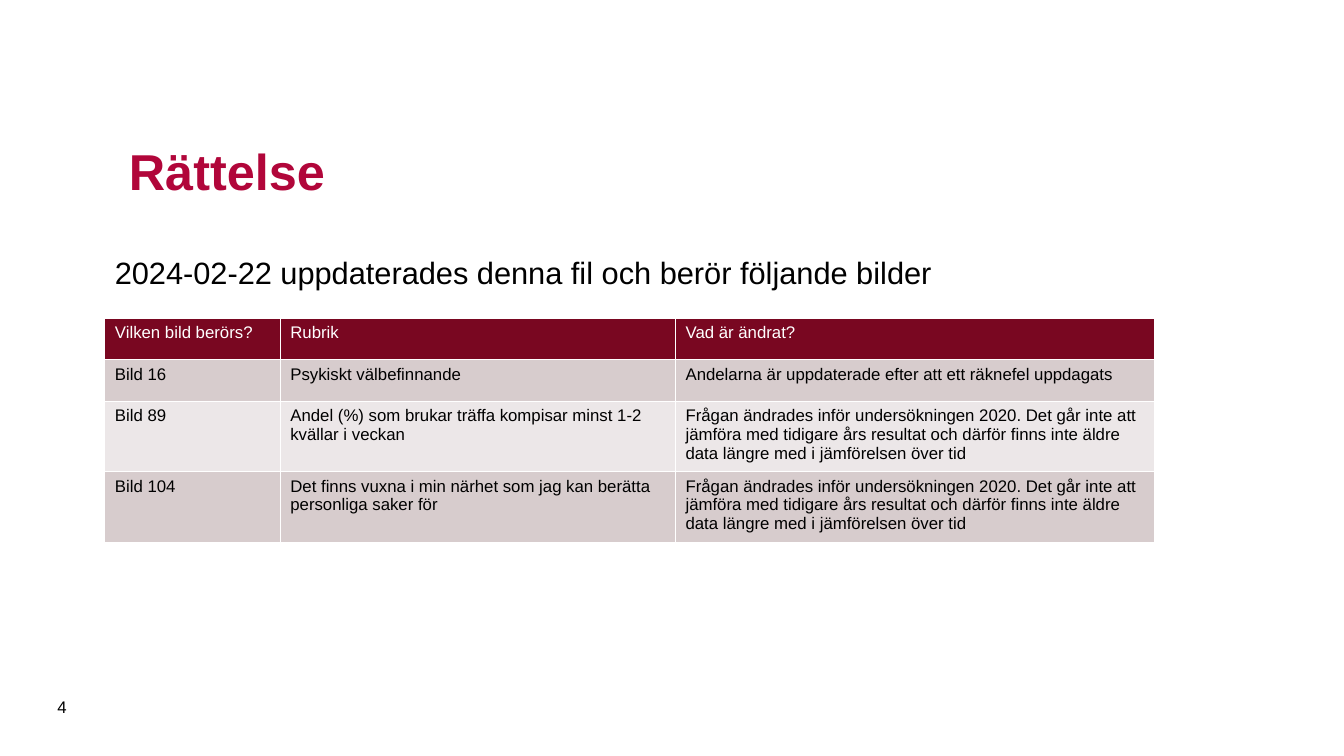
from pptx import Presentation
from pptx.dml.color import RGBColor
from pptx.enum import text
from pptx.util import Inches, Pt

RED = RGBColor(0xB1, 0x06, 0x3A)
WINE = RGBColor(0x79, 0x07, 0x21)
ROSE = RGBColor(0xD7, 0xCC, 0xCD)
PALE = RGBColor(0xEC, 0xE7, 0xE8)
BLACK = RGBColor(0, 0, 0)
WHITE = RGBColor(0xFF, 0xFF, 0xFF)

CHANGE = ("Frågan ändrades inför undersökningen 2020. Det går inte att jämföra "
          "med tidigare års resultat och därför finns inte äldre data längre "
          "med i jämförelsen över tid")
ROWS = [
    ("Vilken bild berörs?", "Rubrik", "Vad är ändrat?"),
    ("Bild 16", "Psykiskt välbefinnande",
     "Andelarna är uppdaterade efter att ett räknefel uppdagats"),
    ("Bild 89", "Andel (%) som brukar träffa kompisar minst 1-2 kvällar i veckan",
     CHANGE),
    ("Bild 104",
     "Det finns vuxna i min närhet som jag kan berätta personliga saker för",
     CHANGE),
]
WIDTHS = (1.74, 3.92, 4.75)
HEIGHTS = (0.41, 0.41, 0.66, 0.66)


def write(frame, words, size, color, bold=False):
    frame.text = words
    font = frame.paragraphs[0].font
    font.name = "Arial"
    font.size = Pt(size)
    font.bold = bold
    font.color.rgb = color


def add_text(slide, area, words, size, color=BLACK, bold=False):
    frame = slide.shapes.add_textbox(*map(Inches, area)).text_frame
    frame.word_wrap = True
    frame.vertical_anchor = text.MSO_ANCHOR.MIDDLE
    write(frame, words, size, color, bold)


def add_grid(slide, left, top):
    grid = slide.shapes.add_table(
        len(ROWS), len(WIDTHS), Inches(left), Inches(top),
        Inches(sum(WIDTHS)), Inches(sum(HEIGHTS))).table
    grid.first_row = False
    grid.horz_banding = False
    for column, width in zip(grid.columns, WIDTHS):
        column.width = Inches(width)
    for i, (row, height, words) in enumerate(zip(grid.rows, HEIGHTS, ROWS)):
        row.height = Inches(height)
        fill = WINE if i == 0 else (PALE, ROSE)[i % 2]
        for cell, word in zip(row.cells, words):
            cell.fill.solid()
            cell.fill.fore_color.rgb = fill
            write(cell.text_frame, word, 12, BLACK if i else WHITE)


def main():
    deck = Presentation()
    deck.slide_width = Inches(13.33)
    deck.slide_height = Inches(7.5)
    slide = deck.slides.add_slide(deck.slide_layouts[6])
    add_text(slide, (1.18, 0.98, 10.24, 1.42), "Rättelse", 36, RED, True)
    add_text(slide, (1.04, 2.48, 10.24, 0.45),
             "2024-02-22 uppdaterades denna fil och berör följande bilder", 22)
    add_grid(slide, 1.04, 3.16)
    add_text(slide, (0.47, 6.81, 0.57, 0.4), "4", 12)
    deck.save("out.pptx")


if __name__ == "__main__":
    main()
